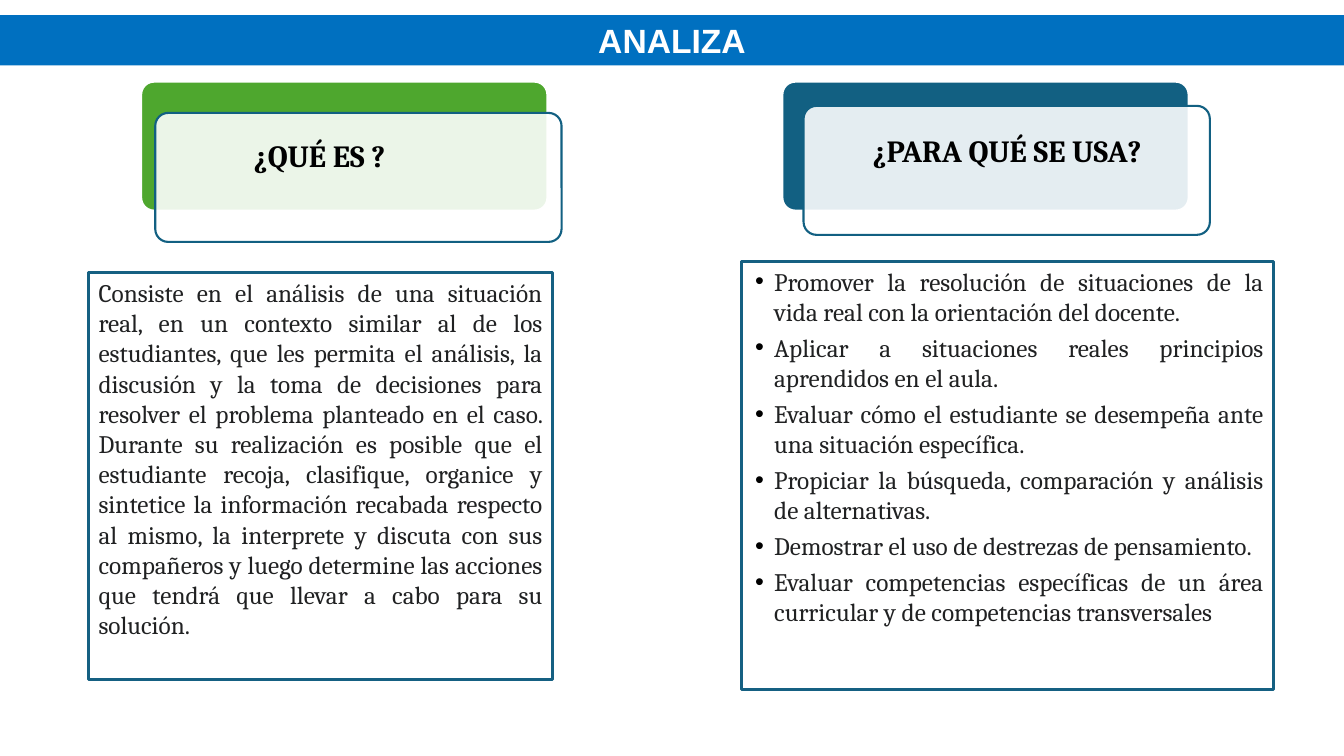
"""Build the ANALIZA slide: two headed columns under a title band."""
from dataclasses import dataclass

from lxml import etree
from pptx import Presentation
from pptx.dml.color import RGBColor
from pptx.enum.shapes import MSO_SHAPE
from pptx.enum.text import MSO_ANCHOR, MSO_AUTO_SIZE, PP_ALIGN
from pptx.oxml.ns import qn
from pptx.util import Pt

RECT, ROUND = MSO_SHAPE.RECTANGLE, MSO_SHAPE.ROUNDED_RECTANGLE
TOP, MIDDLE = MSO_ANCHOR.TOP, MSO_ANCHOR.MIDDLE
CENTER, JUSTIFY = PP_ALIGN.CENTER, PP_ALIGN.JUSTIFY
FIXED = MSO_AUTO_SIZE.NONE


@dataclass(frozen=True)
class Theme:
    """Colours, fonts and type sizes."""
    band: str = "0070C0"
    green: str = "4EA72E"
    teal: str = "126082"
    frame: str = "156082"
    white: str = "FFFFFF"
    black: str = "000000"
    ink: str = "202122"
    sans: str = "Arial"
    serif: str = "Cambria"
    title: int = 24
    head: int = 22
    body: int = 18


LOOK = Theme()
PX = 9144
SIZE = (1333, 750)
BAND = (0, 15, 1333, 50)
CARD = (403, 128)
LABEL = (388, 120)
TITLE = "ANALIZA"

COLUMNS = [
    {
        "head": "¿QUÉ ES ?", "fill": LOOK.green,
        "back": (140, 81), "front": (154, 112), "label": (123, 96),
        "box": (88, 270, 460, 404), "list": False,
        "text": [
            "Consiste en el análisis de una situación real, en un contexto "
            "similar al de los estudiantes, que les permita el análisis, la "
            "discusión y la toma de decisiones para resolver el problema "
            "planteado en el caso. Durante su realización es posible que el "
            "estudiante recoja, clasifique, organice y sintetice la "
            "información recabada respecto al mismo, la interprete y discuta "
            "con sus compañeros y luego determine las acciones que tendrá "
            "que llevar a cabo para su solución.",
        ],
    },
    {
        "head": "¿PARA QUÉ SE USA?", "fill": LOOK.teal,
        "back": (776, 81), "front": (797, 105), "label": (805, 91),
        "box": (735, 259, 528, 425), "list": True,
        "text": [
            "Promover la resolución de situaciones de la vida real con la "
            "orientación del docente.",
            "Aplicar a situaciones reales principios aprendidos en el aula.",
            "Evaluar cómo el estudiante se desempeña ante una situación "
            "específica.",
            "Propiciar la búsqueda, comparación y análisis de alternativas.",
            "Demostrar el uso de destrezas de pensamiento.",
            "Evaluar competencias específicas de un área curricular y "
            "de competencias transversales",
        ],
    },
]


def color(code):
    return RGBColor.from_string(code)


def scale(rect):
    return [n * PX for n in rect]


def add_run(para, text, font, size, code, bold=False):
    run = para.add_run()
    run.text = text
    run.font.name, run.font.size, run.font.bold = font, Pt(size), bold
    run.font.color.rgb = color(code)


def add_box(slide, kind, rect, line, width, fill=None):
    box = slide.shapes.add_shape(kind, *scale(rect))
    box.shadow.inherit = False
    box.line.color.rgb = color(line)
    box.line.width = Pt(width)
    if fill:
        box.fill.solid()
        box.fill.fore_color.rgb = color(fill)
    else:
        box.fill.background()
    if kind == ROUND:
        box.adjustments[0] = 0.1
    return box


def fade(box, share):
    tone = box.fill._xPr.find(qn("a:solidFill"))[0]
    etree.SubElement(tone, qn("a:alpha"), val=str(share * 1000))


def add_bullet(para):
    para.space_before, para.space_after = Pt(3), Pt(1)
    props = para._p.get_or_add_pPr()
    props.set("marL", str(23 * PX))
    props.set("indent", str(-19 * PX))
    tint = etree.SubElement(props, qn("a:buClr"))
    etree.SubElement(tint, qn("a:srgbClr"), val=LOOK.black)
    etree.SubElement(props, qn("a:buFont"), typeface=LOOK.sans)
    etree.SubElement(props, qn("a:buChar"), char="•")


def add_title(slide):
    band = slide.shapes.title
    band.left, band.top, band.width, band.height = scale(BAND)
    band.fill.solid()
    band.fill.fore_color.rgb = color(LOOK.band)
    frame = band.text_frame
    frame.auto_size, frame.vertical_anchor = FIXED, MIDDLE
    para = frame.paragraphs[0]
    para.alignment = CENTER
    add_run(para, TITLE, LOOK.sans, LOOK.title, LOOK.white, True)


def add_head(slide, col):
    add_box(slide, ROUND, col["back"] + CARD, LOOK.white, 1.5, col["fill"])
    front = add_box(slide, ROUND, col["front"] + CARD, LOOK.teal, 1.5,
                    LOOK.white)
    fade(front, 89)
    label = slide.shapes.add_textbox(*scale(col["label"] + LABEL))
    frame = label.text_frame
    frame.word_wrap, frame.vertical_anchor = True, MIDDLE
    frame.margin_left = frame.margin_right = 11 * PX
    frame.margin_top = frame.margin_bottom = 11 * PX
    para = frame.paragraphs[0]
    para.alignment, para.line_spacing = CENTER, 0.9
    add_run(para, col["head"], LOOK.serif, LOOK.head, LOOK.black, True)


def add_body(slide, col):
    box = add_box(slide, RECT, col["box"], LOOK.frame, 2.25)
    frame = box.text_frame
    frame.word_wrap, frame.vertical_anchor = True, TOP
    for i, text in enumerate(col["text"]):
        para = frame.add_paragraph() if i else frame.paragraphs[0]
        para.alignment = JUSTIFY
        if col["list"]:
            add_bullet(para)
        add_run(para, text, LOOK.serif, LOOK.body, LOOK.ink)


def main():
    deck = Presentation()
    deck.slide_width, deck.slide_height = scale(SIZE)
    slide = deck.slides.add_slide(deck.slide_layouts[5])
    add_title(slide)
    for col in COLUMNS:
        add_head(slide, col)
        add_body(slide, col)
    deck.save("out.pptx")


if __name__ == "__main__":
    main()
